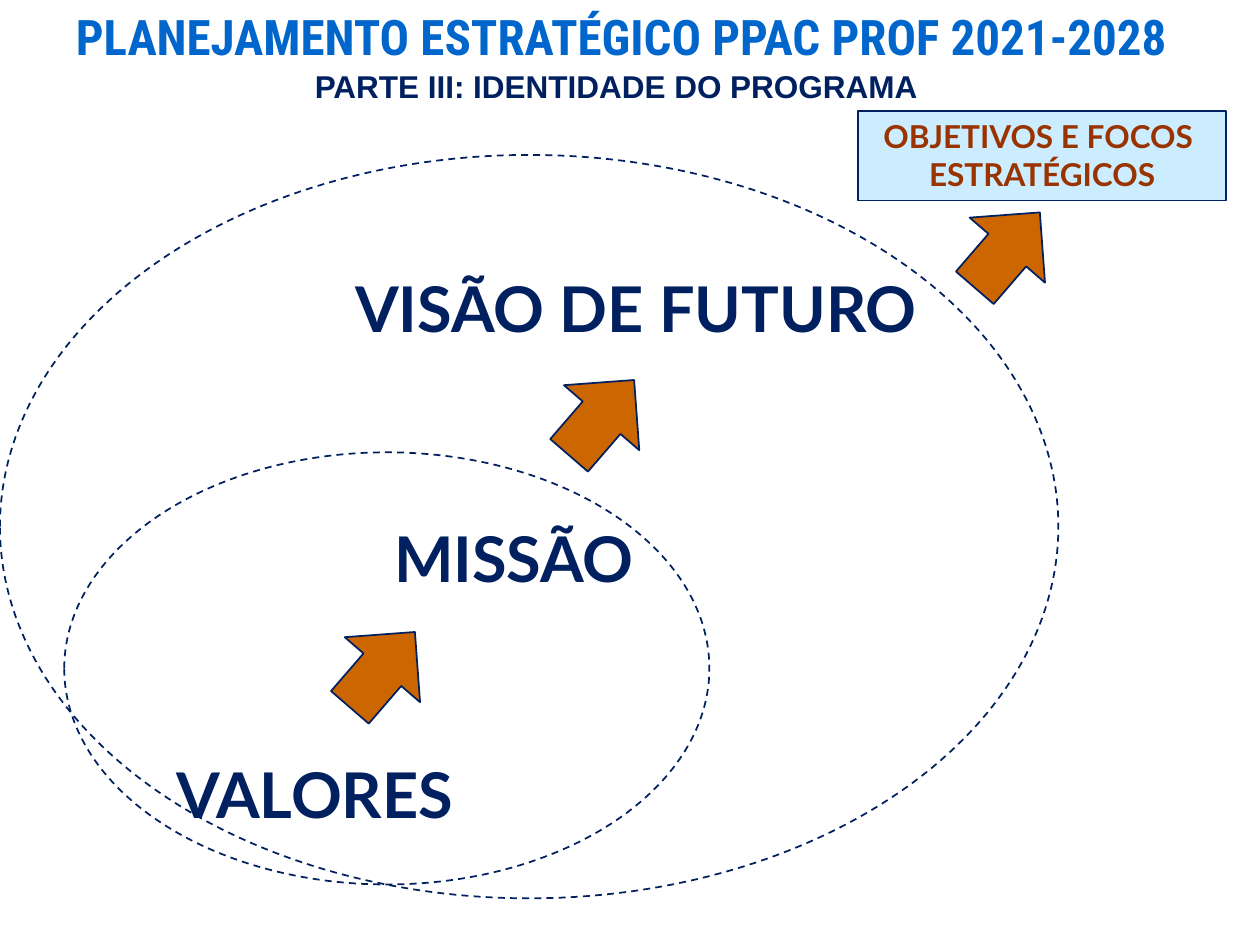
from pptx import Presentation
from pptx.dml.color import RGBColor
from pptx.enum.dml import MSO_LINE
from pptx.enum.shapes import MSO_SHAPE
from pptx.enum.text import MSO_ANCHOR, PP_ALIGN
from pptx.util import Inches, Pt

DASH = MSO_LINE.DASH
ELLIPSE, ARROW, RECTANGLE = MSO_SHAPE.OVAL, MSO_SHAPE.RIGHT_ARROW, MSO_SHAPE.RECTANGLE
LEFT, CENTER = PP_ALIGN.LEFT, PP_ALIGN.CENTER
TOP = MSO_ANCHOR.TOP

COLORS = {
    "title": "0066CC",
    "navy": "002060",
    "arrow": "CC6600",
    "goal_fill": "CCECFF",
    "goal_text": "993300",
}

HEADINGS = [
    ("PLANEJAMENTO ESTRATÉGICO PPAC PROF 2021-2028", (0.43, 0, 9, 0.47),
     "Roboto Condensed", 28, "title", CENTER),
    ("PARTE III: IDENTIDADE DO PROGRAMA", (2.4, 0.48, 5.04, 0.4),
     "Arial", 18, "navy", LEFT),
]
STAGES = [
    ("VALORES", (1.3, 5.95, 2.6, 0.71)),
    ("MISSÃO", (3.03, 4.07, 2.19, 0.71)),
    ("VISÃO DE FUTURO", (2.72, 2.09, 4.86, 0.71)),
]
SCOPES = [(0.51, 3.59, 5.12, 3.43), (0, 1.23, 8.4, 5.9)]
ARROW_CORNERS = [(2.64, 4.92), (4.38, 2.92), (7.6, 1.59)]
ARROW_SIZE = 0.79
ARROW_ANGLE = 310.8
GOAL = ("OBJETIVOS E FOCOS \nESTRATÉGICOS", (6.81, 0.88, 2.92, 0.71))


def rgb(name):
    return RGBColor.from_string(COLORS[name])


def write(holder, text, font, size, color, align):
    frame = holder.text_frame
    frame.text = text
    frame.word_wrap = False
    frame.vertical_anchor = TOP
    for paragraph in frame.paragraphs:
        paragraph.alignment = align
        for run in paragraph.runs:
            run.font.name = font
            run.font.size = Pt(size)
            run.font.bold = True
            run.font.color.rgb = rgb(color)


def add_label(slide, text, box, font, size, color, align):
    label = slide.shapes.add_textbox(*map(Inches, box))
    write(label, text, font, size, color, align)


def add_figure(slide, kind, box, fill=None, width=1):
    figure = slide.shapes.add_shape(kind, *map(Inches, box))
    figure.shadow.inherit = False
    if fill:
        figure.fill.solid()
        figure.fill.fore_color.rgb = rgb(fill)
    else:
        figure.fill.background()
    figure.line.color.rgb = rgb("navy")
    figure.line.width = Pt(width)
    return figure


def main():
    deck = Presentation()
    deck.slide_width, deck.slide_height = Inches(10), Inches(7.5)
    slide = deck.slides.add_slide(deck.slide_layouts[6])

    for heading in HEADINGS:
        add_label(slide, *heading)
    for stage, box in STAGES:
        add_label(slide, stage, box, "Lato", 36, "navy", LEFT)
    for scope_box in SCOPES:
        scope = add_figure(slide, ELLIPSE, scope_box)
        scope.line.dash_style = DASH
    for corner in ARROW_CORNERS:
        step = add_figure(slide, ARROW, (*corner, ARROW_SIZE, ARROW_SIZE), "arrow")
        step.rotation = ARROW_ANGLE

    goal_text, goal_box = GOAL
    goal = add_figure(slide, RECTANGLE, goal_box, "goal_fill", 0.75)
    write(goal, goal_text, "Lato", 18, "goal_text", CENTER)

    deck.save("out.pptx")


if __name__ == "__main__":
    main()
